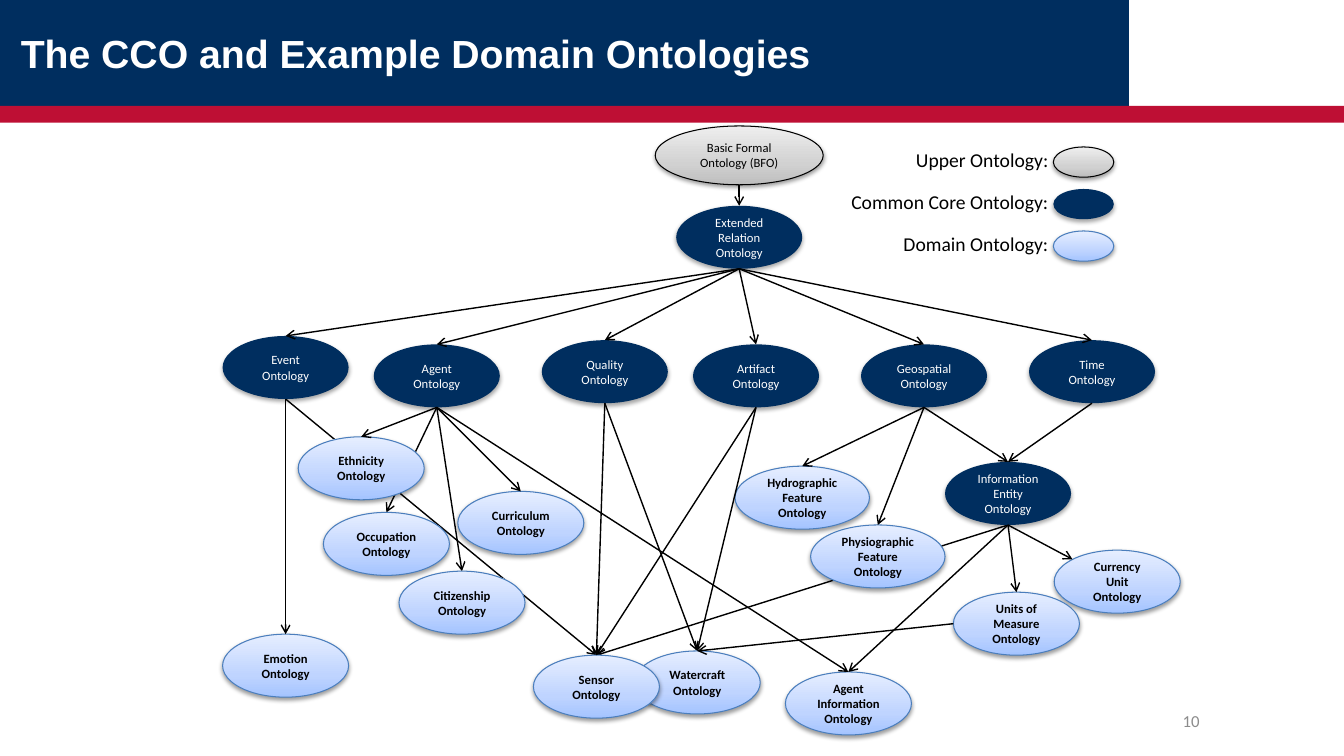
from pptx import Presentation
from pptx.dml.color import RGBColor
from pptx.enum.shapes import MSO_CONNECTOR as CXN, MSO_SHAPE as SHAPE
from pptx.enum.text import MSO_ANCHOR as ANCHOR, PP_ALIGN as ALIGN
from pptx.oxml import parse_xml
from pptx.oxml.ns import nsdecls, qn
from pptx.util import Inches, Pt

COLORS = {
    "navy": "002E5F", "red": "BE0F34", "white": "FFFFFF", "black": "000000",
    "blue": "4B7EBC", "gray": "8C8C8C",
}
KINDS = {
    "upper": dict(stops=("BDBDBD", "D1D1D1", "EEEEEE"), line="black", color="black", bold=False),
    "core": dict(stops=None, line=None, color="white", bold=False),
    "domain": dict(stops=("A4C4FF", "BFD4FF", "E6EEFF"), line="blue", color="black", bold=True),
}

NODES = {
    "Basic Formal Ontology (BFO)": ("upper", 88, 15, 20, 7),
    "Extended Relation Ontology": ("core", 88, 24.5, 15, 7.5),
    "Time Ontology": ("core", 130, 40.5, 15, 7.5),
    "Quality Ontology": ("core", 72, 40.5, 15, 7.5),
    "Information Entity Ontology": ("core", 120, 55, 15, 7.5),
    "Geospatial Ontology": ("core", 110, 41, 15, 7.5),
    "Event Ontology": ("core", 34, 40, 15, 7.5),
    "Artifact Ontology": ("core", 90, 41, 15, 7.5),
    "Agent Ontology": ("core", 52, 41, 15, 7.5),
    "Emotion Ontology": ("domain", 34, 75.5, 15, 7.5),
    "Ethnicity Ontology": ("domain", 43, 52, 15, 7.5),
    "Occupation Ontology": ("domain", 46, 61, 15, 7.5),
    "Hydrographic Feature Ontology": ("domain", 95.5, 55.5, 16, 7.5),
    "Physiographic Feature Ontology": ("domain", 104.5, 62.5, 16, 7.5),
    "Currency Unit Ontology": ("domain", 133, 65.5, 15, 7.5),
    "Units of Measure Ontology": ("domain", 121, 70.5, 15, 7.5),
    "Curriculum Ontology": ("domain", 62, 58.5, 15, 7.5),
    "Citizenship Ontology": ("domain", 55, 68, 15, 7.5),
    "Watercraft Ontology": ("domain", 83, 77.5, 15, 7.5),
    "Sensor Ontology": ("domain", 71, 78, 15, 7.5),
    "Agent Information Ontology": ("domain", 101, 80, 15, 7.5),
}
LINKS_BEHIND = {
    "Information Entity": ["Sensor"],
    "Event": ["Sensor"],
    "Quality": ["Watercraft"],
    "Agent": ["Citizenship", "Occupation"],
}
LINKS_FRONT = {
    "Extended Relation": ["Time", "Agent", "Artifact", "Quality", "Event", "Geospatial"],
    "Geospatial": ["Information Entity", "Hydrographic Feature", "Physiographic Feature"],
    "Time": ["Information Entity"],
    "Event": ["Emotion"],
    "Agent": ["Ethnicity", "Curriculum", "Agent Information"],
    "Information Entity": ["Units of Measure", "Agent Information"],
    "Artifact": ["Watercraft", "Sensor"],
    "Quality": ["Sensor"],
}
LEGEND = {"Upper Ontology:": "upper", "Common Core Ontology:": "core", "Domain Ontology:": "domain"}


def site(name, dx, dy):
    _, col, row, w, h = NODES[name]
    return col + dx * w / 2, row + (1 + dy) * h / 2


class Deck:
    """Draws on one slide with a grid of 160 columns by 90 rows."""

    def __init__(self):
        self.prs = Presentation()
        self.prs.slide_width, self.prs.slide_height = Inches(13.333), Inches(7.5)
        self.s = self.prs.slides.add_slide(self.prs.slide_layouts[6])

    def grid(self, *cells):
        return [Inches(cell / 12) for cell in cells]

    def rgb(self, name):
        return RGBColor.from_string(COLORS[name])

    def set_text(self, sp, text, size, color, align, bold=False, font="Calibri"):
        tf = sp.text_frame
        tf.word_wrap, tf.vertical_anchor = True, ANCHOR.MIDDLE
        p = tf.paragraphs[0]
        p.text, p.alignment = text, align
        p.font.name, p.font.size, p.font.bold = font, Pt(size), bold
        p.font.color.rgb = self.rgb(color)

    def label(self, box, text, *style, **extra):
        self.set_text(self.s.shapes.add_textbox(*self.grid(*box)), text, *style, **extra)

    def band(self, box, color):
        sp = self.s.shapes.add_shape(SHAPE.RECTANGLE, *self.grid(*box))
        sp.shadow.inherit = False
        sp.fill.solid()
        sp.fill.fore_color.rgb = self.rgb(color)
        sp.line.fill.background()

    def ellipse(self, kind, col, row, w, h, text=None):
        look = KINDS[kind]
        sp = self.s.shapes.add_shape(SHAPE.OVAL, *self.grid(col - w / 2, row, w, h))
        if look["stops"]:
            sp.fill.gradient()
            sp.fill.gradient_angle = 90
            stops = "".join(f'<a:gs pos="{pos}"><a:srgbClr val="{color}"/></a:gs>'
                            for pos, color in zip((0, 35000, 100000), look["stops"]))
            old = sp.element.spPr.find(".//" + qn("a:gsLst"))
            old.getparent().replace(old, parse_xml(f'<a:gsLst {nsdecls("a")}>{stops}</a:gsLst>'))
            sp.line.color.rgb = self.rgb(look["line"])
            sp.line.width = Pt(0.75)
        else:
            sp.fill.solid()
            sp.fill.fore_color.rgb = self.rgb("navy")
            sp.line.fill.background()
        sp.shadow.inherit = False
        dist, alpha = (20000, 38000) if look["stops"] else (23000, 35000)
        sp.element.spPr.find(qn("a:effectLst")).append(parse_xml(
            f'<a:outerShdw {nsdecls("a")} blurRad="40000" dist="{dist}" dir="5400000" rotWithShape="0">'
            f'<a:srgbClr val="000000"><a:alpha val="{alpha}"/></a:srgbClr></a:outerShdw>'))
        if text:
            self.set_text(sp, text, 9, look["color"], ALIGN.CENTER, look["bold"])

    def arrow(self, start, end):
        c = self.s.shapes.add_connector(CXN.STRAIGHT, *self.grid(*start, *end))
        c.line.color.rgb = self.rgb("black")
        c.line.width = Pt(1)
        sp_pr = c.element.spPr
        sp_pr.find(qn("a:ln")).append(parse_xml(f'<a:tailEnd {nsdecls("a")} type="arrow"/>'))
        sp_pr.append(parse_xml(f'<a:effectLst {nsdecls("a")}/>'))

    def links(self, tree):
        for parent, children in tree.items():
            for child in children:
                self.arrow(site(f"{parent} Ontology", 0, 1), site(f"{child} Ontology", 0, -1))


def main():
    deck = Deck()
    deck.band((0, 0, 134.4, 12.6), "navy")
    deck.band((0, 12.6, 160, 2), "red")
    deck.label((1.3, 0.5, 129.4, 11.5), "The CCO and Example Domain Ontologies",
               28, "white", ALIGN.LEFT, bold=True, font="Arial")
    deck.label((106.7, 83.4, 37.3, 4.8), "10", 12, "gray", ALIGN.RIGHT)

    deck.links(LINKS_BEHIND)
    for name, (kind, *place) in NODES.items():
        deck.ellipse(kind, *place, text=name)
    deck.links(LINKS_FRONT)
    deck.arrow(site("Basic Formal Ontology (BFO)", 0, 1), site("Extended Relation Ontology", 0, -1))
    deck.arrow(site("Information Entity Ontology", 0, 1), site("Currency Unit Ontology", -0.71, -0.71))
    deck.arrow(site("Units of Measure Ontology", -1, 0), site("Watercraft Ontology", 0, -1))

    for i, (text, kind) in enumerate(LEGEND.items()):
        deck.label((96, 17 + 5 * i, 30, 4), text, 14, "black", ALIGN.RIGHT)
        deck.ellipse(kind, 129, 17.5 + 5 * i, 7.2, 3.6)
    deck.prs.save("out.pptx")


if __name__ == "__main__":
    main()
